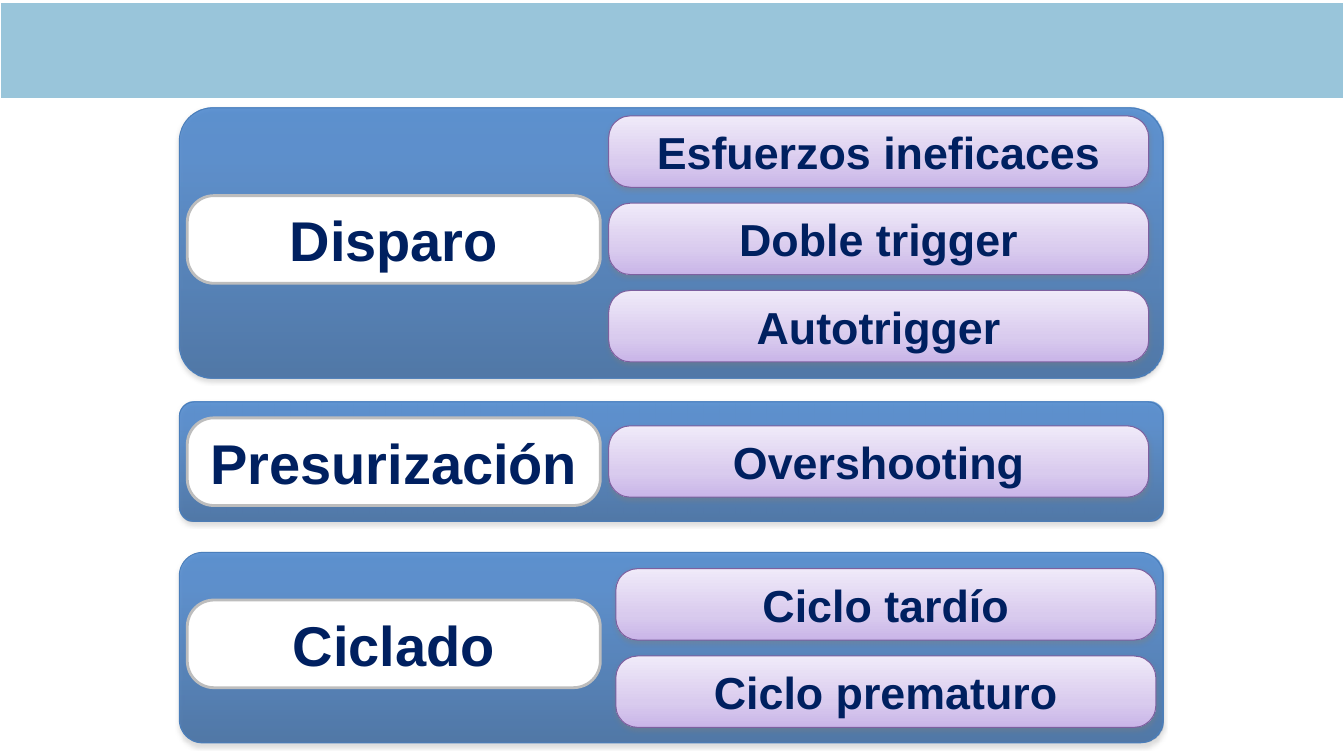
from lxml import etree
from pptx import Presentation
from pptx.dml.color import RGBColor
from pptx.enum.shapes import MSO_SHAPE
from pptx.enum.text import MSO_ANCHOR, PP_ALIGN
from pptx.oxml.ns import qn
from pptx.util import Cm, Pt

RECTANGLE = MSO_SHAPE.RECTANGLE
ROUNDED = MSO_SHAPE.ROUNDED_RECTANGLE
MIDDLE = MSO_ANCHOR.MIDDLE
CENTER = PP_ALIGN.CENTER

WHITE = RGBColor(0xFF, 0xFF, 0xFF)
BAND_BLUE = RGBColor(0x99, 0xC5, 0xDA)
NAVY = RGBColor(0x00, 0x20, 0x60)
PANEL_EDGE = RGBColor(0x4A, 0x7E, 0xBB)
LABEL_EDGE = RGBColor(0xBD, 0xBD, 0xBD)
ITEM_EDGE = RGBColor(0x7D, 0x60, 0xA0)
SHADOW_GREY = RGBColor(0x80, 0x80, 0x80)
PANEL_STOPS = [
    (0, RGBColor(0x3A, 0x7C, 0xCB)),
    (20, RGBColor(0x3C, 0x7B, 0xC7)),
    (100, RGBColor(0x2C, 0x5D, 0x98)),
]
ITEM_STOPS = [
    (0, RGBColor(0xF0, 0xEA, 0xF9)),
    (65, RGBColor(0xD9, 0xCB, 0xEE)),
    (100, RGBColor(0xC9, 0xB5, 0xE8)),
]

FONT = "Arial"
SLIDE_WIDTH, SLIDE_HEIGHT = Cm(33.87), Cm(19.05)
PANEL_LEFT, PANEL_WIDTH = Cm(4.52), Cm(24.79)
LABEL_INDENT, LABEL_WIDTH, LABEL_HEIGHT = Cm(0.2), Cm(10.41), Cm(2.21)
ITEM_WIDTH, ITEM_HEIGHT, ITEM_PITCH = Cm(13.61), Cm(1.8), Cm(2.2)

PANELS = [
    ("Disparo", Cm(2.72), Cm(6.81), Cm(2.21), Cm(10.82), Cm(0.2),
     ["Esfuerzos ineficaces", "Doble trigger", "Autotrigger"]),
    ("Presurización", Cm(10.13), Cm(3), Cm(0.4), Cm(10.82), Cm(0.6),
     ["Overshooting"]),
    ("Ciclado", Cm(13.92), Cm(4.8), Cm(1.2), Cm(11), Cm(0.41),
     ["Ciclo tardío", "Ciclo prematuro"]),
]


def add_color(parent, color, opacity):
    element = etree.SubElement(parent, qn("a:srgbClr"), val=str(color))
    if opacity < 100:
        etree.SubElement(element, qn("a:alpha"), val=str(opacity * 1000))


def add_box(slide, kind, box, edge, edge_width):
    shape = slide.shapes.add_shape(kind, *box)
    shape.shadow.inherit = False
    shape.line.color.rgb = edge
    shape.line.width = Pt(edge_width)
    return shape


def fill_solid(shape, color):
    shape.fill.solid()
    shape.fill.fore_color.rgb = color


def fill_gradient(shape, stops, opacity):
    shape.fill.gradient()
    shape.fill.gradient_angle = 270
    stop_list = shape._element.spPr.find(qn("a:gradFill")).find(qn("a:gsLst"))
    for stop in list(stop_list):
        stop_list.remove(stop)
    for position, color in stops:
        stop = etree.SubElement(stop_list, qn("a:gs"), pos=str(position * 1000))
        add_color(stop, color, opacity)


def add_shadow(shape, distance, opacity):
    effects = shape._element.spPr.find(qn("a:effectLst"))
    shadow = etree.SubElement(
        effects, qn("a:outerShdw"), blurRad=str(Pt(3.1)),
        dist=str(Pt(distance)), dir="5400000", rotWithShape="0")
    add_color(shadow, SHADOW_GREY, opacity)


def write_text(shape, text, size):
    frame = shape.text_frame
    frame.word_wrap = True
    frame.vertical_anchor = MIDDLE
    frame.margin_left = frame.margin_right = 0
    frame.margin_top = frame.margin_bottom = 0
    para = frame.paragraphs[0]
    para.alignment = CENTER
    span = para.add_run()
    span.text = text
    span.font.name = FONT
    span.font.size = Pt(size)
    span.font.bold = True
    span.font.color.rgb = NAVY


def add_band(slide, box):
    band = add_box(slide, RECTANGLE, box, WHITE, 2)
    fill_solid(band, BAND_BLUE)


def add_label(slide, box, text):
    label = add_box(slide, ROUNDED, box, LABEL_EDGE, 2)
    label.adjustments[0] = 0.305
    fill_solid(label, WHITE)
    write_text(label, text, 40)


def add_item(slide, box, text):
    item = add_box(slide, ROUNDED, box, ITEM_EDGE, 0.75)
    item.adjustments[0] = 0.305
    fill_gradient(item, ITEM_STOPS, 100)
    add_shadow(item, 1.6, 38)
    write_text(item, text, 32)


def add_panel(slide, box, heading, label_drop, item_indent, item_drop, items):
    left, top, width, height = box
    panel = add_box(slide, ROUNDED, box, PANEL_EDGE, 0.75)
    panel.adjustments[0] = 0.123
    fill_gradient(panel, PANEL_STOPS, 78)
    add_shadow(panel, 1.8, 35)
    add_label(slide, (left + LABEL_INDENT, top + label_drop,
                      LABEL_WIDTH, LABEL_HEIGHT), heading)
    for index, text in enumerate(items):
        item_top = top + item_drop + index * ITEM_PITCH
        add_item(slide, (left + item_indent, item_top,
                         ITEM_WIDTH, ITEM_HEIGHT), text)


def main():
    deck = Presentation()
    deck.slide_width, deck.slide_height = SLIDE_WIDTH, SLIDE_HEIGHT
    page = deck.slides.add_slide(deck.slide_layouts[6])
    add_band(page, (0, Cm(0.03), SLIDE_WIDTH, Cm(2.48)))
    for heading, top, height, label_drop, item_indent, item_drop, items in PANELS:
        box = (PANEL_LEFT, top, PANEL_WIDTH, height)
        add_panel(page, box, heading, label_drop, item_indent, item_drop, items)
    deck.save("out.pptx")


if __name__ == "__main__":
    main()
